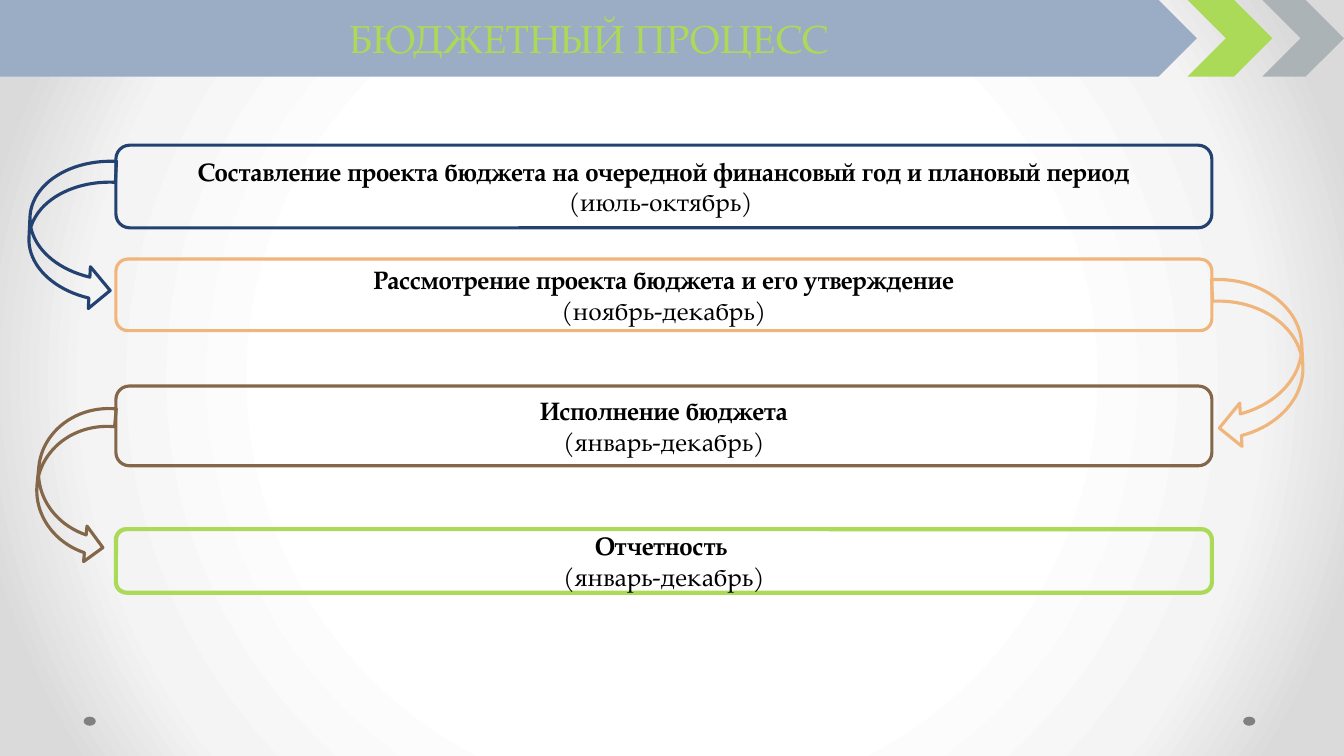
from pptx import Presentation
from pptx.dml.color import RGBColor
from pptx.enum.shapes import MSO_SHAPE as Shape
from pptx.enum.text import MSO_ANCHOR as Anchor, PP_ALIGN as Align
from pptx.oxml import parse_xml
from pptx.oxml.ns import nsdecls, qn
from pptx.util import Inches, Pt

FONT = "TeX Gyre Pagella"
BLACK = RGBColor(0x00, 0x00, 0x00)
NAVY = RGBColor(0x23, 0x42, 0x71)
ORANGE = RGBColor(0xF0, 0xB5, 0x7A)
BROWN = RGBColor(0x84, 0x66, 0x48)
GREEN = RGBColor(0xAB, 0xD9, 0x58)
BLUE = RGBColor(0x9B, 0xAD, 0xC4)
SILVER = RGBColor(0xAC, 0xB3, 0xB6)
GRAY = RGBColor(0x80, 0x80, 0x80)
GLOW = [
    (50, RGBColor(0xFF, 0xFF, 0xFF)),
    (76, RGBColor(0xF4, 0xF4, 0xF4)),
    (92, RGBColor(0xDA, 0xDA, 0xDA)),
]

STAGES = [
    (0, 0.82, NAVY, 2.25,
     "Составление проекта бюджета на очередной финансовый год и плановый период",
     "(июль-октябрь) "),
    (1.13, 0.71, ORANGE, 2.25,
     "Рассмотрение проекта бюджета и его утверждение", "(ноябрь-декабрь)"),
    (2.39, 0.79, BROWN, 2.25, "Исполнение бюджета", "(январь-декабрь)"),
    (3.81, 0.63, GREEN, 3, "Отчетность ", "(январь-декабрь)"),
]

ARROWS = [
    (Shape.CURVED_RIGHT_ARROW, -0.86, 0.14, 0.83, 1.49, 2.8, NAVY),
    (Shape.CURVED_LEFT_ARROW, 10.91, 1.31, 0.86, 1.69, 357, ORANGE),
    (Shape.CURVED_RIGHT_ARROW, -0.78, 2.58, 0.71, 1.56, 5.5, BROWN),
]


def add_glow(page):
    page.background.fill.gradient()
    gradient = page.element.find(".//" + qn("a:gradFill"))
    stops = "".join(
        f'<a:gs pos="{position * 1000}"><a:srgbClr val="{color}"/></a:gs>'
        for position, color in GLOW
    )
    radial = parse_xml(
        f'<a:gradFill {nsdecls("a")} rotWithShape="1"><a:gsLst>{stops}</a:gsLst>'
        '<a:path path="circle">'
        '<a:fillToRect l="50000" t="50000" r="50000" b="50000"/>'
        '</a:path></a:gradFill>'
    )
    gradient.getparent().replace(gradient, radial)


def add_figure(page, kind, left, top, width, height, fill=None, line=None, weight=2.25):
    figure = page.shapes.add_shape(
        kind, Inches(left), Inches(top), Inches(width), Inches(height)
    )
    figure.shadow.inherit = False
    if fill is None:
        figure.fill.background()
    else:
        figure.fill.solid()
        figure.fill.fore_color.rgb = fill
    if line is None:
        figure.line.fill.background()
    else:
        figure.line.color.rgb = line
        figure.line.width = Pt(weight)
    return figure


def add_span(para, text, size, color, bold=False):
    para.alignment = Align.CENTER
    span = para.add_run()
    span.text = text
    span.font.name = FONT
    span.font.size = Pt(size)
    span.font.color.rgb = color
    span.font.bold = bold


def add_header(page, left, top, width, height):
    banner = add_figure(page, Shape.PENTAGON, left, top, width - 1.46, height, BLUE)
    frame = banner.text_frame
    frame.word_wrap = True
    frame.vertical_anchor = Anchor.MIDDLE
    add_span(frame.paragraphs[0], "БЮДЖЕТНЫЙ ПРОЦЕСС", 28, GREEN)
    for inset, chevron_width, color in [(1.55, 0.84, GREEN), (0.81, 0.81, SILVER)]:
        add_figure(page, Shape.CHEVRON, left + width - inset, top,
                   chevron_width, height, color)


def add_stages(page, left, top, width):
    for offset, height, color, weight, name, months in STAGES:
        box = add_figure(page, Shape.ROUNDED_RECTANGLE, left, top + offset,
                         width, height, line=color, weight=weight)
        frame = box.text_frame
        frame.word_wrap = True
        frame.vertical_anchor = Anchor.MIDDLE
        add_span(frame.paragraphs[0], name, 18, BLACK, bold=True)
        add_span(frame.add_paragraph(), months, 18, BLACK)


def add_arrows(page, left, top):
    for kind, shift, drop, width, height, angle, color in ARROWS:
        arrow = add_figure(page, kind, left + shift, top + drop,
                           width, height, line=color)
        arrow.rotation = angle


def add_footer_dots(page, left, top, width):
    dot_width = 0.12
    for dot_left in (left, left + width - dot_width):
        add_figure(page, Shape.OVAL, dot_left, top, dot_width, 0.09, GRAY)


def main():
    deck = Presentation()
    deck.slide_width = Inches(13.33)
    deck.slide_height = Inches(7.5)
    page = deck.slides.add_slide(deck.slide_layouts[6])
    add_glow(page)
    add_footer_dots(page, 0.83, 7.11, 11.62)
    add_stages(page, 1.15, 1.44, 10.87)
    add_arrows(page, 1.15, 1.44)
    add_header(page, 0, 0, 13.33, 0.76)
    deck.save("out.pptx")


if __name__ == "__main__":
    main()
